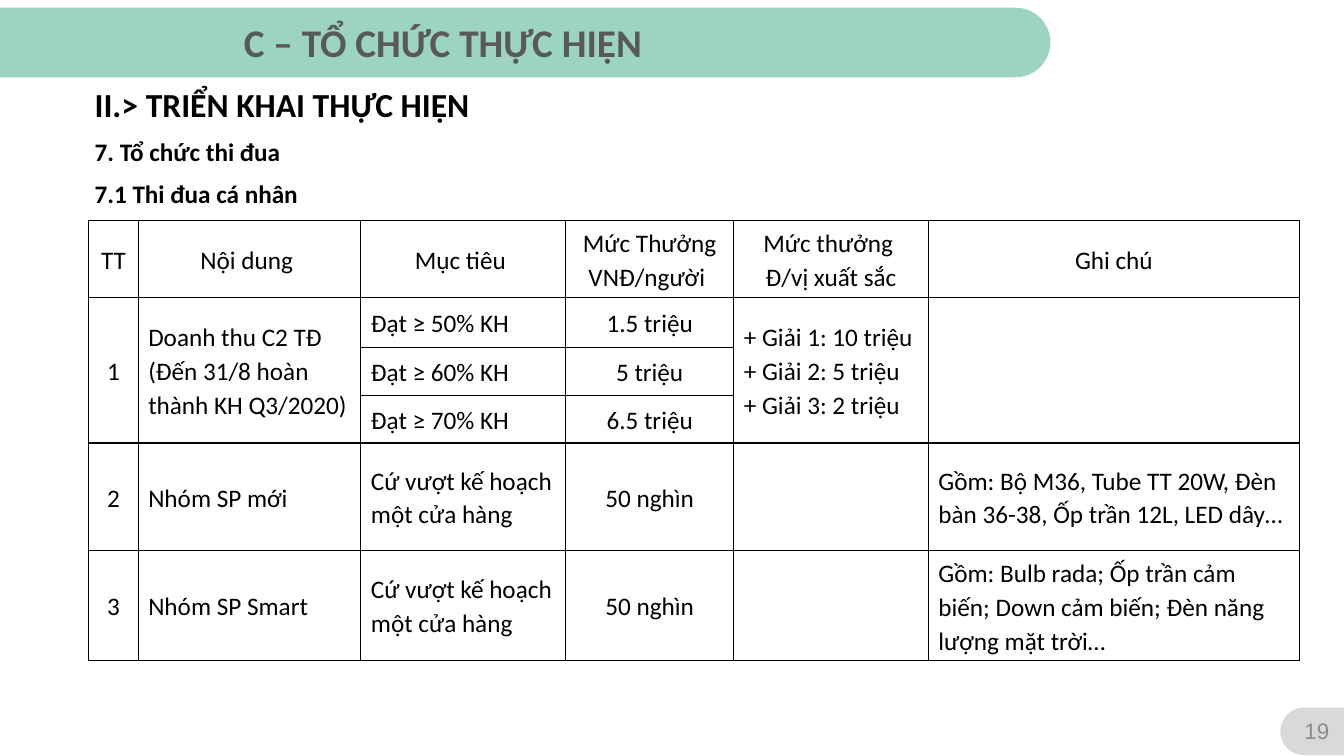
from lxml.etree import fromstring
from pptx import Presentation
from pptx.dml.color import RGBColor
from pptx.enum.shapes import MSO_SHAPE
from pptx.enum.text import MSO_ANCHOR as ANCHOR, MSO_AUTO_SIZE as AUTO, PP_ALIGN as ALIGN
from pptx.util import Pt

NS = "http://schemas.openxmlformats.org/drawingml/2006/main"
COLS = [35.3, 159.1, 146.2, 120.2, 139, 265]
ROWS = [54.3, 36, 34, 34, 77, 78]
CENTRED_COLS = (0, 3)
MERGED_COLS = (0, 1, 4, 5)
CELLS = [
    ["TT", "Nội dung ", "Mục tiêu ", "Mức Thưởng\nVNĐ/người ",
     "Mức thưởng \nĐ/vị xuất sắc", "Ghi chú"],
    ["1", "Doanh thu C2 TĐ (Đến 31/8 hoàn thành KH Q3/2020)", "Đạt ≥ 50% KH",
     "1.5 triệu", "+ Giải 1: 10 triệu\n+ Giải 2: 5 triệu\n+ Giải 3: 2 triệu", ""],
    ["", "", "Đạt ≥ 60% KH", "5 triệu", "", ""],
    ["", "", "Đạt ≥ 70% KH", "6.5 triệu", "", ""],
    ["2", "Nhóm SP mới", "Cứ vượt kế hoạch một cửa hàng", "50 nghìn", "",
     "Gồm: Bộ M36, Tube TT 20W, Đèn bàn 36-38, Ốp trần 12L, LED dây…"],
    ["3", "Nhóm SP Smart", "Cứ vượt kế hoạch một cửa hàng", "50 nghìn", "",
     "Gồm: Bulb rada; Ốp trần cảm biến; Down cảm biến; Đèn năng lượng mặt trời…"],
]


def rgb(color):
    """Return the colour for a hex string."""
    return RGBColor.from_string(color)


def place(sp, x, y, w, h):
    """Set a shape's box in points."""
    sp.left, sp.top, sp.width, sp.height = Pt(x), Pt(y), Pt(w), Pt(h)


def format_text(tf, size, color="000000", bold=False, font="Calibri",
                align=ALIGN.LEFT, spacing=None):
    """Format every paragraph and run of a text frame."""
    for p in tf.paragraphs:
        p.alignment = align
        p.line_spacing = spacing
        for r in p.runs:
            r.font.size, r.font.bold, r.font.name = Pt(size), bold, font
            r.font.color.rgb = rgb(color)


def fill_frame(sp, text, box, size, anchor=ANCHOR.MIDDLE, grow=True, **style):
    """Place a text shape, then set and format its text."""
    place(sp, *box)
    tf = sp.text_frame
    tf.text = text
    tf.word_wrap = True
    tf.auto_size = AUTO.SHAPE_TO_FIT_TEXT if grow else AUTO.NONE
    tf.vertical_anchor = anchor
    format_text(tf, size, **style)


def add_text(s, text, box, size, **style):
    """Add a text box."""
    fill_frame(s.shapes.add_textbox(0, 0, 0, 0), text, box, size, **style)


def add_tab(s, x, y, w, h, rotation, color):
    """Add a turned tab with one round end that covers the given box, behind the title."""
    sp = s.shapes.add_shape(MSO_SHAPE.ROUND_2_SAME_RECTANGLE, 0, 0, 0, 0)
    place(sp, x + (w - h) / 2, y + (h - w) / 2, h, w)
    sp.rotation = rotation
    sp.adjustments[0] = 0.5
    sp.adjustments[1] = 0
    sp.shadow.inherit = False
    sp.fill.solid()
    sp.fill.fore_color.rgb = rgb(color)
    sp.line.fill.background()
    s.shapes.title.element.addprevious(sp.element)


def format_cell(cell, text, align):
    """Fill, border and write one table cell."""
    cell.fill.solid()
    cell.fill.fore_color.rgb = rgb("FFFFFF")
    cell.vertical_anchor = ANCHOR.MIDDLE
    cell.text = text
    format_text(cell.text_frame, 18, align=align, spacing=1.1)
    tc_pr = cell._tc.get_or_add_tcPr()
    for i, side in enumerate("LRTB"):
        tc_pr.insert(i, fromstring(
            f'<a:ln{side} xmlns:a="{NS}" w="{Pt(1)}"><a:solidFill>'
            f'<a:srgbClr val="000000"/></a:solidFill></a:ln{side}>'))


def add_reward_table(s, x, y):
    """Add the table of targets and rewards."""
    frame = s.shapes.add_table(len(ROWS), len(COLS), Pt(x), Pt(y),
                               Pt(sum(COLS)), Pt(sum(ROWS)))
    table = frame.table
    table.first_row = table.horz_banding = False
    for col, w in zip(table.columns, COLS):
        col.width = Pt(w)
    for row, h in zip(table.rows, ROWS):
        row.height = Pt(h)
    for i, texts in enumerate(CELLS):
        for j, text in enumerate(texts):
            centred = i == 0 or j in CENTRED_COLS
            format_cell(table.cell(i, j), text, ALIGN.CENTER if centred else ALIGN.LEFT)
    for j in MERGED_COLS:
        table.cell(1, j).merge(table.cell(3, j))


def main():
    """Build and save the slide."""
    prs = Presentation()
    prs.slide_width, prs.slide_height = Pt(960), Pt(540)
    s = prs.slides.add_slide(prs.slide_layouts[5])
    add_tab(s, 0, 5.5, 750.3, 49.7, 90, "9CD4C1")
    add_tab(s, 914.5, 505.5, 46, 33.8, 270, "D9D9D9")
    fill_frame(s.shapes.title, "C – TỔ CHỨC THỰC HIỆN", (167, 9.4, 582, 41), 28,
               anchor=ANCHOR.TOP, color="595959", bold=True)
    add_text(s, "19", (923, 507.6, 35.3, 28.8), 16, grow=False,
             color="8C8C8C", font="Arial", align=ALIGN.CENTER)
    add_reward_table(s, 63.4, 157.7)
    add_text(s, "II.> TRIỂN KHAI THỰC HIỆN", (60.5, 56.2, 582, 36), 24,
             anchor=ANCHOR.TOP, bold=True)
    add_text(s, "7. Tổ chức thi đua", (60.5, 93.6, 738, 29), 18, bold=True)
    add_text(s, "7.1 Thi đua cá nhân", (60.5, 123.8, 738, 29), 18, bold=True)
    prs.save("out.pptx")


if __name__ == "__main__":
    main()
